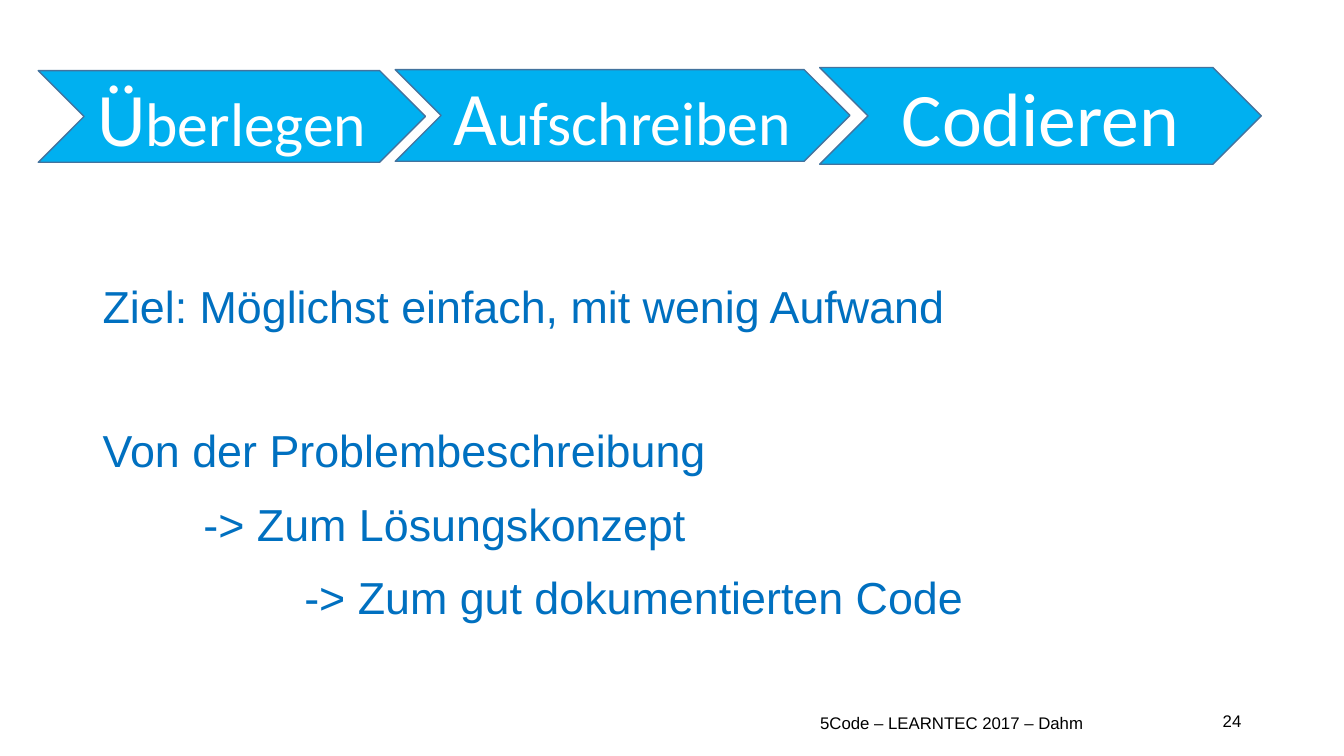
import pptx
import pptx.dml.color
import pptx.enum.shapes
import pptx.enum.text
import pptx.util
from dataclasses import dataclass

Inches = pptx.util.Inches
Pt = pptx.util.Pt
Align = pptx.enum.text.PP_ALIGN
Anchor = pptx.enum.text.MSO_ANCHOR


@dataclass(frozen=True)
class Theme:
    chevron_fill: str = "00B0F0"
    chevron_line: str = "43739E"
    chevron_text: str = "FFFFFF"
    body_text: str = "0070C0"
    footer_text: str = "000000"
    body_font: str = "Arial"
    chevron_font: str = "Calibri"
    large: int = 54
    medium: int = 44
    body: int = 32
    footer: int = 12


def rgb(value):
    return pptx.dml.color.RGBColor.from_string(value)


class SlideBuilder:
    def __init__(self, slide, theme):
        self.slide = slide
        self.theme = theme

    def add_span(self, para, text, size, font, color):
        span = para.add_run()
        span.text = text
        span.font.size = Pt(size)
        span.font.name = font
        span.font.color.rgb = rgb(color)

    def add_chevron(self, place, spans):
        theme = self.theme
        shape = self.slide.shapes.add_shape(
            pptx.enum.shapes.MSO_SHAPE.CHEVRON, *map(Inches, place))
        shape.shadow.inherit = False
        shape.fill.solid()
        shape.fill.fore_color.rgb = rgb(theme.chevron_fill)
        shape.line.color.rgb = rgb(theme.chevron_line)
        shape.line.width = Pt(1)
        frame = shape.text_frame
        frame.margin_left = frame.margin_right = 0
        frame.vertical_anchor = Anchor.MIDDLE
        para = frame.paragraphs[0]
        para.alignment = Align.CENTER
        for text, size in spans:
            self.add_span(para, text, size, theme.chevron_font, theme.chevron_text)

    def add_box(self, place, anchor):
        box = self.slide.shapes.add_textbox(*map(Inches, place))
        box.text_frame.word_wrap = True
        box.text_frame.vertical_anchor = anchor
        return box.text_frame

    def add_body(self, place, lines):
        theme = self.theme
        frame = self.add_box(place, Anchor.TOP)
        for index, (text, indent, before) in enumerate(lines):
            para = frame.add_paragraph() if index else frame.paragraphs[0]
            para.line_spacing = 0.9
            para.space_before = Pt(before)
            para.space_after = Pt(6)
            properties = para._p.get_or_add_pPr()
            properties.set("marL", str(Inches(indent)))
            properties.set("indent", "0")
            self.add_span(para, text, theme.body, theme.body_font, theme.body_text)

    def add_footer(self, place, text, alignment):
        theme = self.theme
        para = self.add_box(place, Anchor.MIDDLE).paragraphs[0]
        para.alignment = alignment
        self.add_span(para, text, theme.footer, theme.body_font, theme.footer_text)


def main():
    deck = pptx.Presentation()
    deck.slide_width = Inches(13.33)
    deck.slide_height = Inches(7.5)
    theme = Theme()
    page = SlideBuilder(deck.slides.add_slide(deck.slide_layouts[6]), theme)

    # Goal and the steps towards the code: text, indent, space before
    page.add_body((0.92, 2.78, 11.5, 3.98), [
        ("Ziel: Möglichst einfach, mit wenig Aufwand", 0, 0),
        ("Von der Problembeschreibung", 0, 62.3),
        ("-> Zum Lösungskonzept", 1, 11.6),
        ("-> Zum gut dokumentierten Code", 2, 11.6),
    ])

    # Footer and page number
    page.add_footer((7.19, 6.97, 4.5, 0.4), "5Code – LEARNTEC 2017 – Dahm", Align.CENTER)
    page.add_footer((11.69, 6.95, 0.72, 0.4), "24", Align.RIGHT)

    # Process chevrons
    page.add_chevron((8.13, 0.67, 4.38, 0.96), [("Codieren", theme.large)])
    page.add_chevron((0.38, 0.7, 3.84, 0.91),
                     [("Ü", theme.large), ("berlegen", theme.medium)])
    page.add_chevron((3.92, 0.69, 4.51, 0.91),
                     [("A", theme.large), ("ufschreiben", theme.medium)])

    deck.save("out.pptx")


if __name__ == "__main__":
    main()
